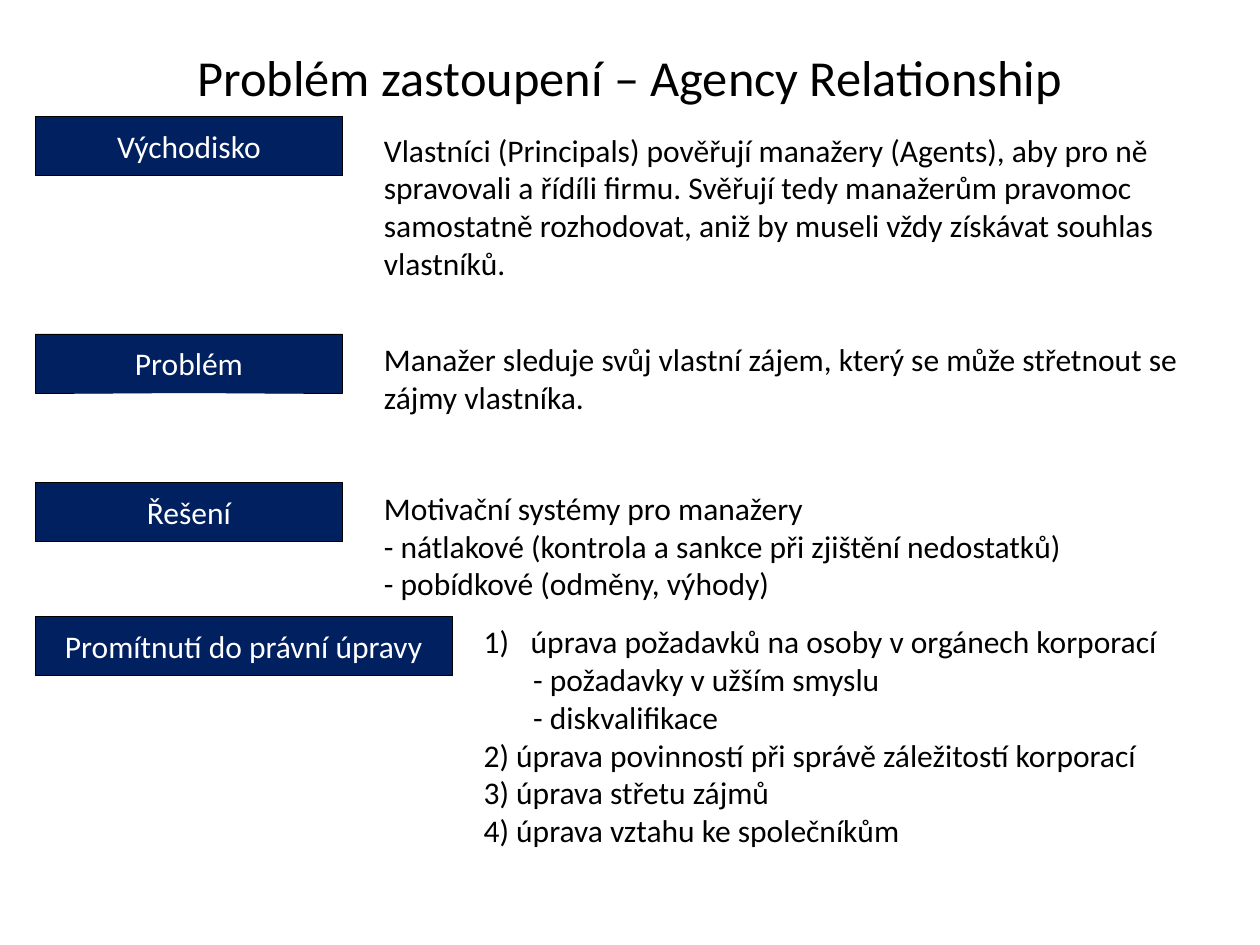
from dataclasses import dataclass

from lxml import etree
from pptx import Presentation
from pptx.dml.color import RGBColor
from pptx.enum.shapes import MSO_SHAPE
from pptx.enum.text import MSO_ANCHOR, MSO_AUTO_SIZE, PP_ALIGN
from pptx.oxml.ns import qn
from pptx.slide import Slide
from pptx.text.text import TextFrame, _Paragraph
from pptx.util import Cm, Pt

RECTANGLE = MSO_SHAPE.RECTANGLE
MIDDLE = MSO_ANCHOR.MIDDLE
GROW = MSO_AUTO_SIZE.SHAPE_TO_FIT_TEXT
CENTER = PP_ALIGN.CENTER
LEFT = PP_ALIGN.LEFT


@dataclass(frozen=True)
class Theme:
    font: str = "Calibri"
    title_size: float = 28.8
    body_size: float = 18
    outline_width: float = 0.25
    ink: RGBColor = RGBColor(0x00, 0x00, 0x00)
    label_fill: RGBColor = RGBColor(0x00, 0x20, 0x60)
    label_ink: RGBColor = RGBColor(0xFF, 0xFF, 0xFF)


@dataclass(frozen=True)
class Line:
    text: str
    indent: float = 0
    numbered: bool = False


@dataclass(frozen=True)
class Topic:
    label: str
    top: float
    lines: tuple[Line, ...]
    text_height: float
    text_width: float = 17.6
    text_left: float = 7.49
    text_drop: float = 0
    label_width: float = 6.2


THEME = Theme()
TITLE = "Problém zastoupení – Agency Relationship"
LABEL_LEFT = 0.71
LABEL_HEIGHT = 1.19

TOPICS = (
    Topic("Východisko", 2.34, (
        Line("Vlastníci (Principals) pověřují manažery (Agents), aby pro ně "
             "spravovali a řídíli firmu. Svěřují tedy manažerům pravomoc "
             "samostatně rozhodovat, aniž by museli vždy získávat souhlas "
             "vlastníků."),
    ), text_height=3.33, text_drop=0.17),
    Topic("Problém", 6.73, (
        Line("Manažer sleduje svůj vlastní zájem, který se může střetnout se "
             "zájmy vlastníka."),
    ), text_height=1.8, text_width=17.4),
    Topic("Řešení", 9.73, (
        Line("Motivační systémy pro manažery"),
        Line("- nátlakové (kontrola a sankce při zjištění nedostatků)"),
        Line("- pobídkové (odměny, výhody)"),
    ), text_height=2.57),
    Topic("Promítnutí do právní úpravy", 12.42, (
        Line("úprava požadavků na osoby v orgánech korporací", 0.95, True),
        Line("- požadavky v užším smyslu", 1),
        Line("- diskvalifikace", 1),
        Line("2) úprava povinností při správě záležitostí korporací"),
        Line("3) úprava střetu zájmů"),
        Line("4) úprava vztahu ke společníkům"),
    ), text_height=4.88, text_width=15.6, text_left=9.5, label_width=8.41),
)


def indent_line(paragraph: _Paragraph, line: Line) -> None:
    properties = paragraph._p.get_or_add_pPr()
    properties.set("marL", str(Cm(line.indent)))
    if line.numbered:
        properties.set("indent", str(-Cm(line.indent)))
        etree.SubElement(properties, qn("a:buAutoNum"), type="arabicParenR")


def write(frame: TextFrame, lines: tuple[Line, ...], size: float,
          color: RGBColor, align: PP_ALIGN) -> None:
    frame.word_wrap = True
    frame.text = "\n".join(line.text for line in lines)
    for paragraph, line in zip(frame.paragraphs, lines):
        paragraph.alignment = align
        if line.indent:
            indent_line(paragraph, line)
        for run in paragraph.runs:
            run.font.name = THEME.font
            run.font.size = Pt(size)
            run.font.color.rgb = color


def add_title(slide: Slide) -> None:
    title = slide.shapes.add_textbox(Cm(1.27), Cm(0.76), Cm(22.86), Cm(1.55))
    title.text_frame.vertical_anchor = MIDDLE
    write(title.text_frame, (Line(TITLE),), THEME.title_size, THEME.ink, CENTER)


def add_topic(slide: Slide, topic: Topic) -> None:
    label = slide.shapes.add_shape(
        RECTANGLE, Cm(LABEL_LEFT), Cm(topic.top),
        Cm(topic.label_width), Cm(LABEL_HEIGHT))
    label.shadow.inherit = False
    label.fill.solid()
    label.fill.fore_color.rgb = THEME.label_fill
    label.line.color.rgb = THEME.ink
    label.line.width = Pt(THEME.outline_width)
    label.text_frame.vertical_anchor = MIDDLE
    write(label.text_frame, (Line(topic.label),), THEME.body_size,
          THEME.label_ink, CENTER)

    explanation = slide.shapes.add_textbox(
        Cm(topic.text_left), Cm(topic.top + topic.text_drop),
        Cm(topic.text_width), Cm(topic.text_height))
    explanation.text_frame.auto_size = GROW
    write(explanation.text_frame, topic.lines, THEME.body_size, THEME.ink, LEFT)


def main() -> None:
    presentation = Presentation()
    presentation.slide_width = Cm(25.4)
    presentation.slide_height = Cm(19.05)
    slide = presentation.slides.add_slide(presentation.slide_layouts[6])
    add_title(slide)
    for topic in TOPICS:
        add_topic(slide, topic)
    presentation.save("out.pptx")


if __name__ == "__main__":
    main()
